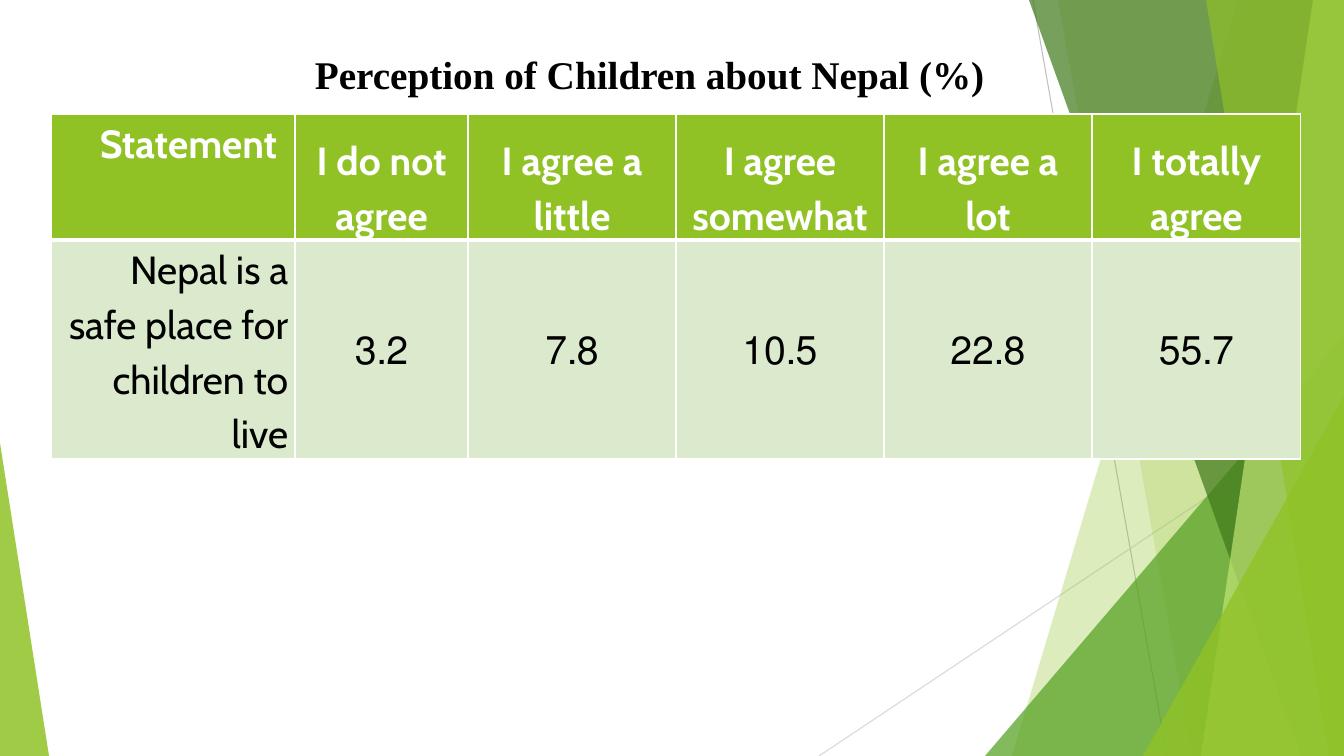
from lxml.etree import SubElement as Sub
from pptx import Presentation
from pptx.dml.color import RGBColor as RGB
from pptx.enum.shapes import MSO_CONNECTOR as Conn, MSO_SHAPE as Kind
from pptx.enum.text import MSO_ANCHOR as Anchor, MSO_AUTO_SIZE as Auto, PP_ALIGN as Align
from pptx.oxml.ns import qn
from pptx.util import Pt

# Content
TITLE = "Perception of Children about Nepal (%)"
ROWS = [
    ["\u00a0Statement", "I do not agree", "I agree a little",
     "I agree somewhat", "I agree a lot", "I totally agree"],
    ["Nepal is a safe place for children to live",
     "3.2", "7.8", "10.5", "22.8", "55.7"],
]

# Theme
THEME = dict(
    green="90C226", leaf="54A021", dark="3F7819", lime="C0E474",
    pale="DBE9CD", white="FFFFFF", black="000000", gray="BFBFBF",
    mist="D9D9D9", body="Cabin", head="Times New Roman", size=28,
)

# Layout in px
PX = 914400 / 100.8
WIDE, HIGH = 1344, 756
TITLE_BOX = (305, 45, 733, 57)
TABLE_AT = (51, 114)
COLS = [244, 173, 208, 208, 208, 209]
ROW_HIGH = [126, 219]
INSET = 7
RAYS = [(1033, 0, 1167, HIGH, "gray"), (WIDE, 406, 819, HIGH, "mist")]
# Bands: top left x, bottom left x; each reaches the right slide edge
# Wedges: left, top, width, apex position; each stands on the bottom edge
DECOR = [
    ("band", (1238, 1012), "green", 30),
    ("band", (1058, 1192), "green", 20),
    ("wedge", (985, 336, 359, 1), "leaf", 72),
    ("band", (1029, 1301), "dark", 70),
    ("band", (1313, 1201), "lime", 70),
    ("band", (1206, 1329), "green", 65),
    ("wedge", (1143, 396, 201, 1), "green", 80),
    ("wedge", (0, 443, 49, 0), "green", 85),
]


def emu(*vals):
    return [round(v * PX) for v in vals]


def tint(name):
    return RGB.from_string(THEME[name])


def paint(shape, name, alpha):
    shape.shadow.inherit = False
    shape.line.fill.background()
    shape.fill.solid()
    shape.fill.fore_color.rgb = tint(name)
    color = shape.fill._xPr.find(".//" + qn("a:srgbClr"))
    Sub(color, qn("a:alpha"), val=str(alpha * 1000))


def style(para, face, color, bold):
    font = para.font
    font.name, font.size, font.bold = THEME[face], Pt(THEME["size"]), bold
    font.color.rgb = tint(color)


def edge(cell, side, width):
    line = Sub(cell._tc.get_or_add_tcPr(), qn("a:ln" + side), w=str(Pt(width)))
    fill = Sub(line, qn("a:solidFill"))
    Sub(fill, qn("a:srgbClr"), val=THEME["white"])


def add_decor(shapes):
    for x1, y1, x2, y2, color in RAYS:
        ray = shapes.add_connector(Conn.STRAIGHT, *emu(x1, y1, x2, y2))
        ray.line.color.rgb, ray.line.width = tint(color), Pt(0.75)
        Sub(ray._element.spPr, qn("a:effectLst"))
    for kind, place, color, alpha in DECOR:
        if kind == "band":
            top, low = place
            path = shapes.build_freeform(top, 0, PX)
            path.add_line_segments([(WIDE, 0), (WIDE, HIGH), (low, HIGH)])
            shape = path.convert_to_shape()
        else:
            x, y, w, apex = place
            shape = shapes.add_shape(Kind.ISOSCELES_TRIANGLE, *emu(x, y, w, HIGH - y))
            shape.adjustments[0] = apex
        paint(shape, color, alpha)


def fill_cell(cell, text, row, col):
    head = row == 0
    for side in "LRTB":
        thick = head and side == "B" or row == 1 and side == "T"
        edge(cell, side, 3 if thick else 1)
    cell.fill.solid()
    cell.fill.fore_color.rgb = tint("green" if head else "pale")
    cell.margin_left = cell.margin_right = emu(INSET)[0]
    cell.margin_top = cell.margin_bottom = 0
    if col == 0:
        cell.vertical_anchor = Anchor.TOP
    else:
        cell.vertical_anchor = Anchor.BOTTOM if head else Anchor.MIDDLE
    cell.text = text
    para = cell.text_frame.paragraphs[0]
    para.alignment = Align.CENTER if col else Align.RIGHT
    para.line_spacing = 1.15
    para._p.get_or_add_pPr().set("rtl", "1")
    style(para, "body", "white" if head else "black", head)


def add_grid(shapes):
    place = emu(*TABLE_AT, sum(COLS), sum(ROW_HIGH))
    table = shapes.add_table(len(ROWS), len(COLS), *place).table
    for col, width in zip(table.columns, emu(*COLS)):
        col.width = width
    for row, height in zip(table.rows, emu(*ROW_HIGH)):
        row.height = height
    for r, texts in enumerate(ROWS):
        for c, text in enumerate(texts):
            fill_cell(table.cell(r, c), text, r, c)


def add_title(shapes):
    frame = shapes.add_textbox(*emu(*TITLE_BOX)).text_frame
    frame.word_wrap = True
    frame.auto_size = Auto.SHAPE_TO_FIT_TEXT
    frame.text = TITLE
    style(frame.paragraphs[0], "head", "black", True)


def main():
    deck = Presentation()
    deck.slide_width, deck.slide_height = emu(WIDE, HIGH)
    shapes = deck.slides.add_slide(deck.slide_layouts[6]).shapes
    add_decor(shapes)
    add_grid(shapes)
    add_title(shapes)
    deck.save("out.pptx")


if __name__ == "__main__":
    main()
